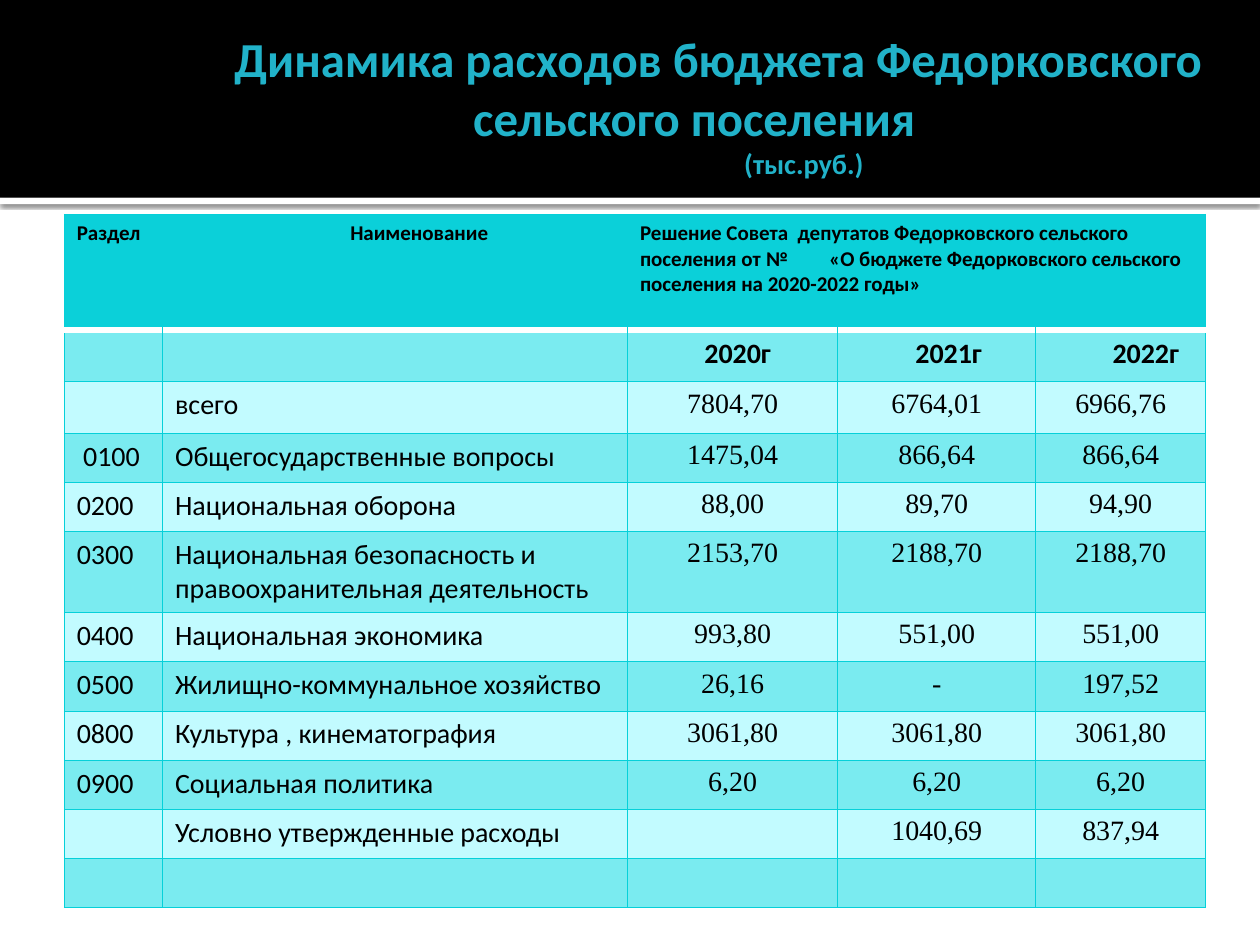
from lxml.etree import SubElement
from pptx import Presentation
from pptx.dml.color import RGBColor
from pptx.enum.shapes import MSO_SHAPE
from pptx.enum.text import MSO_ANCHOR, MSO_AUTO_SIZE, PP_ALIGN
from pptx.oxml import parse_xml
from pptx.oxml.ns import nsdecls, qn
from pptx.util import Inches, Pt

COLORS = {"band": "000000", "strip": "FFFFFF", "title": "21B2C9", "text": "000000",
          "head": "0BD0D9", "dark": "7AEBF0", "light": "C2FBFF", "line": "06D0D9"}
NO_STYLE = "{2D5ABB26-0587-4C30-8999-92F81FD0307C}"
COLS = [0.78, 3.69, 1.67, 1.57, 1.35]
ROWS = [0.92, 0.41, 0.41, 0.39, 0.39, 0.58] + [0.39] * 6
DATA = [
    ["Раздел", "Наименование",
     "Решение Совета  депутатов Федорковского сельского поселения от\t№\t"
     "«О бюджете Федорковского сельского поселения на 2020-2022 годы»", "", ""],
    ["", "", "2020г", "2021г", "2022г"],
    ["", "всего", "7804,70", "6764,01", "6966,76"],
    ["0100", "Общегосударственные вопросы", "1475,04", "866,64", "866,64"],
    ["0200", "Национальная оборона", "88,00", "89,70", "94,90"],
    ["0300", "Национальная безопасность и правоохранительная деятельность",
     "2153,70", "2188,70", "2188,70"],
    ["0400", "Национальная экономика", "993,80", "551,00", "551,00"],
    ["0500", "Жилищно-коммунальное хозяйство", "26,16", "-", "197,52"],
    ["0800", "Культура , кинематография", "3061,80", "3061,80", "3061,80"],
    ["0900", "Социальная политика", "6,20", "6,20", "6,20"],
    ["", "Условно утвержденные расходы", "", "1040,69", "837,94"],
    ["", "", "", "", ""],
]
# Left indents of single cells, by row and column
INDENTS = {(0, 1): 1.39, (1, 2): 0.08, (1, 3): 0.19, (1, 4): 0.4, (3, 0): 0.05}


def write(p, text, indent, align, color, **font):
    r = p.add_run()
    r.text = text
    p.alignment = align
    pPr = p._p.get_or_add_pPr()
    pPr.set("marL", str(Inches(indent)))
    pPr.set("indent", "0")
    for name, value in font.items():
        setattr(r.font, name, value)
    r.font.color.rgb = RGBColor.from_string(COLORS[color])


def border(cell, side, color, width):
    ln = parse_xml(f'<a:{side} {nsdecls("a")} w="{Pt(width)}"><a:solidFill>'
                   f'<a:srgbClr val="{COLORS[color]}"/></a:solidFill></a:{side}>')
    tcPr = cell._tc.get_or_add_tcPr()
    tcPr.insert(len(tcPr.findall("*")), ln)


prs = Presentation()
prs.slide_width, prs.slide_height = Inches(10), Inches(7.5)
slide = prs.slides.add_slide(prs.slide_layouts[5])

# Top band, with a shadowed white strip below it
for name, top, height in [("strip", 1.57, 0.05), ("band", 0, 1.57)]:
    sp = slide.shapes.add_shape(MSO_SHAPE.RECTANGLE, 0, Inches(top),
                                prs.slide_width, Inches(height))
    sp.shadow.inherit = False
    sp.fill.solid()
    sp.fill.fore_color.rgb = RGBColor.from_string(COLORS[name])
    sp.line.fill.background()
    if name == "strip":
        sp._element.spPr.find(qn("a:effectLst")).append(parse_xml(
            f'<a:outerShdw {nsdecls("a")} blurRad="{Pt(2.5)}" dist="{Pt(0.8)}" dir="5400000">'
            '<a:srgbClr val="000000"><a:alpha val="60000"/></a:srgbClr></a:outerShdw>'))

# Title, brought in front of the band
title = slide.shapes.title
slide.shapes._spTree.append(title._element)
title.left, title.top, title.width, title.height = map(Inches, (0.28, 0.36, 9.37, 0.94))
tf = title.text_frame
frame = {"word_wrap": True, "auto_size": MSO_AUTO_SIZE.NONE,
         "vertical_anchor": MSO_ANCHOR.MIDDLE, "margin_left": Inches(0.1),
         "margin_right": Inches(0.05), "margin_top": Inches(0.05),
         "margin_bottom": Inches(0.05)}
for name, value in frame.items():
    setattr(tf, name, value)
lines = [("Динамика расходов бюджета Федорковского", 1.42, 27.9),
         ("сельского поселения", 1.04, 27.9), ("(тыс.руб.)", 2.78, 16.2)]
for i, (text, indent, size) in enumerate(lines):
    p = tf.add_paragraph() if i else tf.paragraphs[0]
    write(p, text, indent, PP_ALIGN.CENTER, "title",
          name="Calibri", size=Pt(size), bold=True)

# Budget table
table = slide.shapes.add_table(len(ROWS), len(COLS), Inches(0.51), Inches(1.7),
                               Inches(sum(COLS)), Inches(sum(ROWS))).table
table.first_row = table.horz_banding = False
table._tbl.tblPr.find(qn("a:tableStyleId")).text = NO_STYLE
for column, width in zip(table.columns, COLS):
    column.width = Inches(width)
for row, height in zip(table.rows, ROWS):
    row.height = Inches(height)
table.cell(0, 2).merge(table.cell(0, 4))

for i, row in enumerate(DATA):
    for j, text in enumerate(row):
        cell = table.cell(i, j)
        # Lines come before the fill in a cell's properties
        if i or j == 0:
            border(cell, "lnL", "line", 0.5)
        if i or j >= 2:
            border(cell, "lnR", "line", 0.5)
        border(cell, "lnT", *(("strip", 3.78) if i == 1 else ("line", 0.5)))
        border(cell, "lnB", *(("strip", 3.78) if i == 0 else ("line", 0.5)))
        cell.fill.solid()
        fill = "head" if i == 0 else "dark" if i % 2 else "light"
        cell.fill.fore_color.rgb = RGBColor.from_string(COLORS[fill])
        p = cell.text_frame.paragraphs[0]
        if not text:
            SubElement(p._p, qn("a:endParaRPr")).set("sz", "1600")
            continue
        centred = i > 0 and j >= 2
        write(p, text, INDENTS.get((i, j), 0),
              PP_ALIGN.CENTER if centred else PP_ALIGN.LEFT, "text",
              name="Times New Roman" if centred and i > 1 else "Calibri",
              size=Pt(16 if i else 12), bold=i < 2)

# Tab stops for the blank date and number in the heading
pPr = table.cell(0, 2).text_frame.paragraphs[0]._p.get_or_add_pPr()
tabs = SubElement(pPr, qn("a:tabLst"))
for pos in (1.18, 1.7):
    tab = SubElement(tabs, qn("a:tab"))
    tab.set("pos", str(Inches(pos)))
    tab.set("algn", "l")

prs.save("out.pptx")
